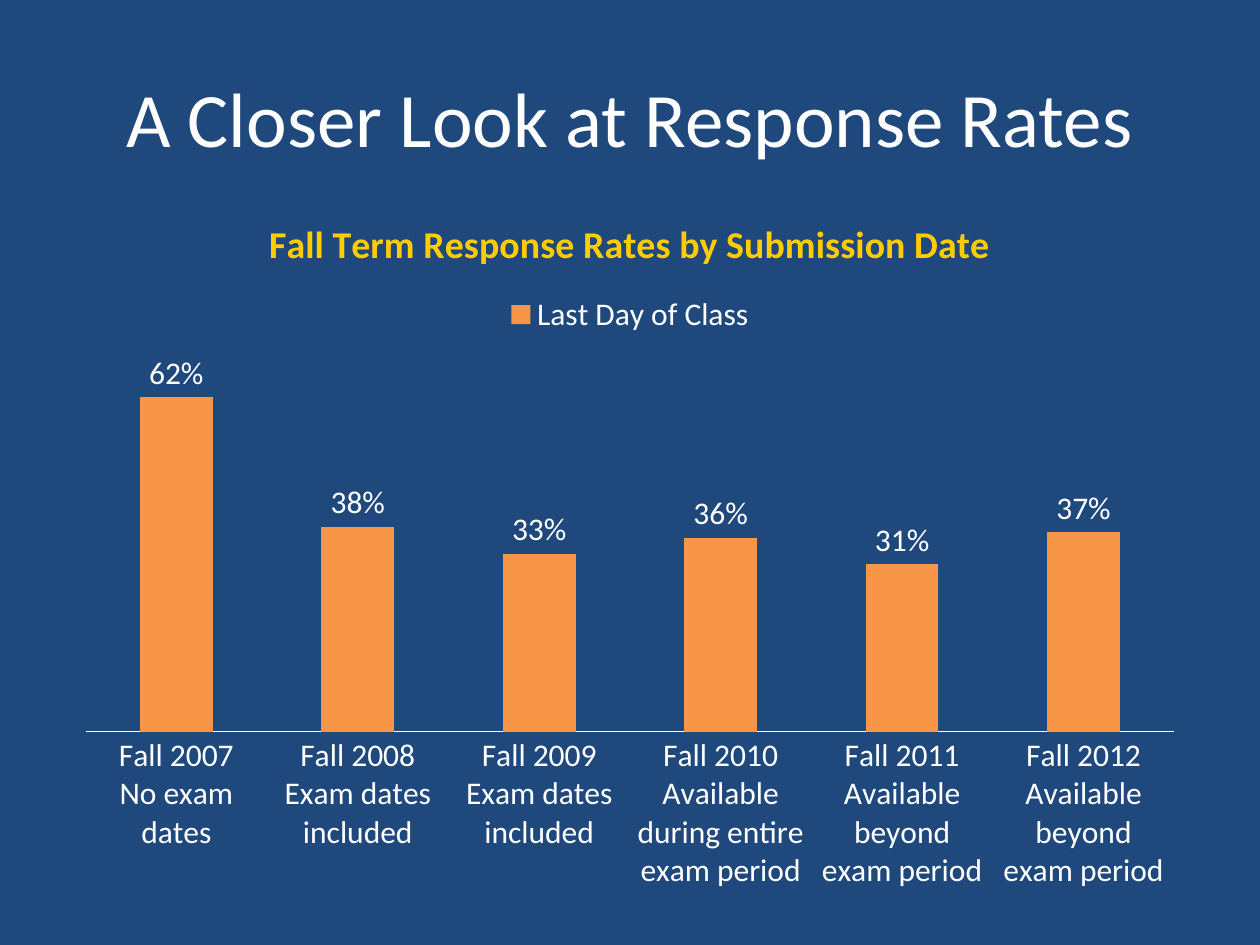
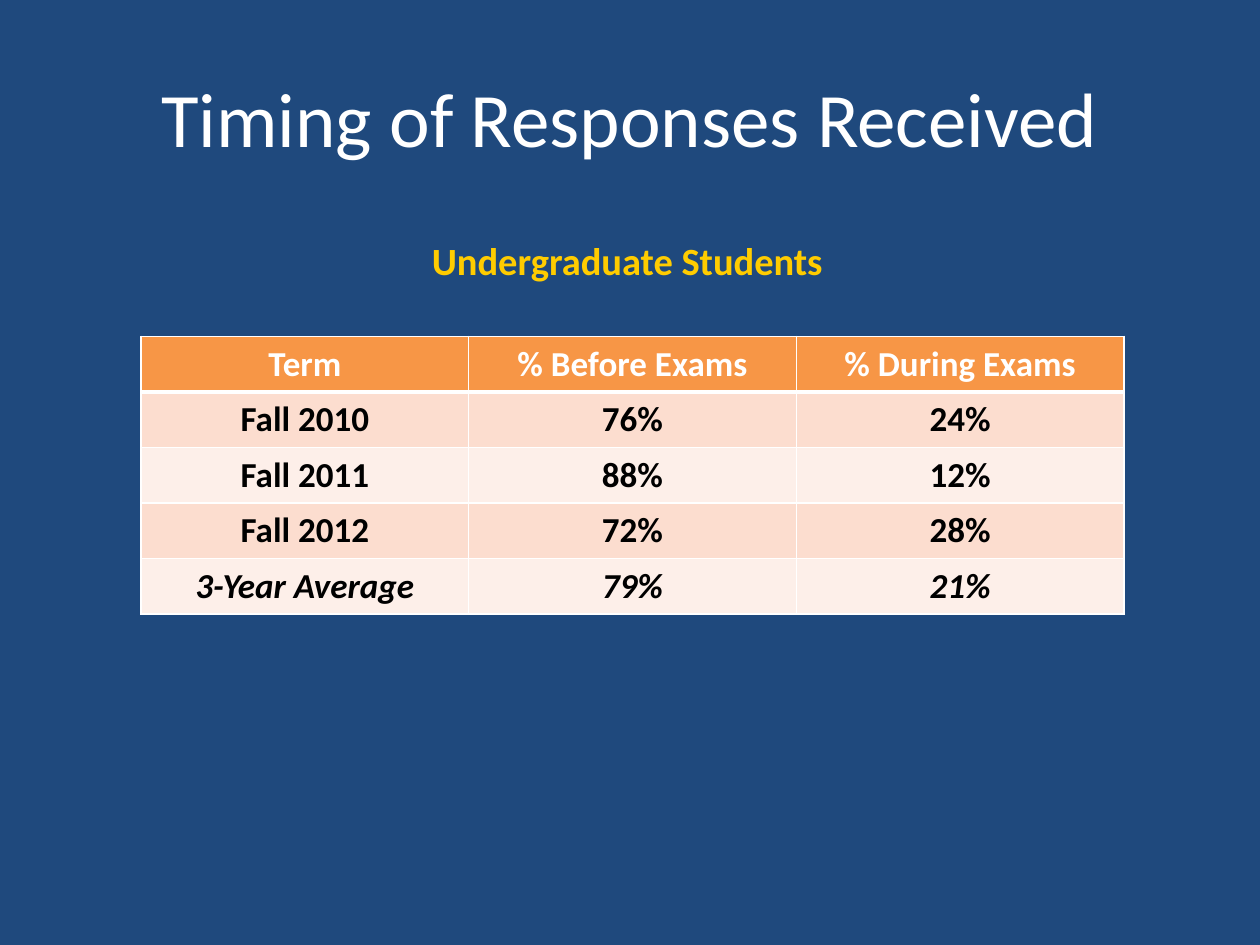
import pptx
import pptx.util
import pptx.chart.data
import pptx.dml.color
import pptx.enum.chart
import pptx.enum.text
import pptx.oxml
import pptx.oxml.ns

RGB = pptx.dml.color.RGBColor
NAVY = RGB(0x1F, 0x49, 0x7D)
WHITE = RGB(0xFF, 0xFF, 0xFF)
BLACK = RGB(0x00, 0x00, 0x00)
GOLD = RGB(0xFF, 0xCC, 0x00)
ORANGE = RGB(0xF7, 0x96, 0x46)
PEACH = RGB(0xFC, 0xDD, 0xCF)
CREAM = RGB(0xFD, 0xEF, 0xE9)
FONT = "Calibri"

# The slide is a grid of 20 columns by 15 rows
WIDE, HIGH = pptx.util.Inches(10), pptx.util.Inches(7.5)
COL, ROW = WIDE / 20, HIGH / 15
HEAD_BOX = (1, 0.6, 18, 2.5)
PLOT_BOX = (1, 3, 18, 11.34)
NOTE_BOX = (6.66, 3.66, 6.66, 0.94)
GRID_BOX = (2.24, 5.34, 15.6, 4.4)

RATES = {
    "Fall 2007\nNo exam dates": 0.62,
    "Fall 2008 Exam dates included": 0.38,
    "Fall 2009 Exam dates included": 0.33,
    "Fall 2010 Available during entire exam period": 0.36,
    "Fall 2011 Available beyond exam period": 0.31,
    "Fall 2012 Available beyond exam period": 0.37,
}
TIMES = [
    ("Term", "% Before Exams", "% During Exams"),
    ("Fall 2010", "76%", "24%"),
    ("Fall 2011", "88%", "12%"),
    ("Fall 2012", "72%", "28%"),
    ("3-Year Average", "79%", "21%"),
]


def place(box):
    """Turn columns and rows into slide lengths."""
    left, top, width, height = box
    return [round(n) for n in (left * COL, top * ROW, width * COL, height * ROW)]


def style(font, size, color, bold=False, slant=False):
    font.name, font.size = FONT, pptx.util.Pt(size)
    font.bold, font.italic = bold, slant
    font.color.rgb = color


def write(frame, text, *look, center=True):
    par = frame.paragraphs[0]
    align = pptx.enum.text.PP_ALIGN
    par.alignment = align.CENTER if center else align.LEFT
    run = par.add_run()
    run.text = text
    style(run.font, *look)


def start(deck, text):
    """Add a slide with the shared title."""
    slide = deck.slides.add_slide(deck.slide_layouts[5])
    head = slide.shapes.title
    head.left, head.top, head.width, head.height = place(HEAD_BOX)
    head.text_frame.vertical_anchor = pptx.enum.text.MSO_ANCHOR.MIDDLE
    write(head.text_frame, text, 44, WHITE)
    return slide


def plot(slide, box):
    kinds = pptx.enum.chart
    data = pptx.chart.data.CategoryChartData(number_format="0%")
    data.categories = list(RATES)
    data.add_series("Last Day of Class", list(RATES.values()))
    chart = slide.shapes.add_chart(
        kinds.XL_CHART_TYPE.COLUMN_CLUSTERED, *place(box), data).chart
    style(chart.font, 18, WHITE)

    # Title and legend
    chart.has_title = True
    write(chart.chart_title.text_frame,
          "Fall Term Response Rates by Submission Date", 21.6, GOLD, True)
    chart.chart_title.include_in_layout = False
    chart.has_legend = True
    chart.legend.position = kinds.XL_LEGEND_POSITION.TOP
    chart.legend.include_in_layout = False

    # Axes
    base, side = chart.category_axis, chart.value_axis
    base.major_tick_mark = kinds.XL_TICK_MARK.NONE
    base.format.line.color.rgb = WHITE
    side.minimum_scale, side.maximum_scale = 0, 0.7
    side.has_major_gridlines = False
    side.tick_labels.number_format = "0%"
    side.visible = False

    # Bars and their labels
    bars = chart.plots[0]
    bars.vary_by_categories = False
    bars.gap_width, bars.overlap = 150, -25
    fill = bars.series[0].format.fill
    fill.solid()
    fill.fore_color.rgb = ORANGE
    bars.has_data_labels = True
    tags = bars.data_labels
    tags.show_value = True
    tags.number_format, tags.number_format_is_linked = "0%", False
    tags.position = kinds.XL_LABEL_POSITION.OUTSIDE_END
    style(tags.font, 18, WHITE)


def edge(cell, top, low):
    """Draw white borders, with the given top and bottom points."""
    props = cell._tc.get_or_add_tcPr()
    for name, width in (("lnL", 1), ("lnR", 1), ("lnT", top), ("lnB", low)):
        props.append(pptx.oxml.parse_xml(
            f'<a:{name} {pptx.oxml.ns.nsdecls("a")} w="{pptx.util.Pt(width)}">'
            f'<a:solidFill><a:srgbClr val="{WHITE}"/></a:solidFill></a:{name}>'))


def table(slide, box):
    grid = slide.shapes.add_table(len(TIMES), len(TIMES[0]), *place(box)).table
    last = len(TIMES) - 1
    for r, line in enumerate(TIMES):
        shade = ORANGE if r == 0 else PEACH if r % 2 else CREAM
        ink = BLACK if r else WHITE
        for c, text in enumerate(line):
            cell = grid.cell(r, c)
            edge(cell, 3 if r == 1 else 1, 3 if r == 0 else 1)
            cell.fill.solid()
            cell.fill.fore_color.rgb = shade
            write(cell.text_frame, text, 20, ink, True, r == last)


def note(slide, box, text):
    frame = slide.shapes.add_textbox(*place(box)).text_frame
    frame.word_wrap = True
    write(frame, text, 22, GOLD, True, center=False)


def main():
    deck = pptx.Presentation()
    deck.slide_width, deck.slide_height = WIDE, HIGH
    back = deck.slide_master.background.fill
    back.solid()
    back.fore_color.rgb = NAVY

    # Response rates
    plot(start(deck, "A Closer Look at Response Rates"), PLOT_BOX)

    # Timing
    slide = start(deck, "Timing of Responses Received")
    table(slide, GRID_BOX)
    note(slide, NOTE_BOX, "Undergraduate Students")

    deck.save("out.pptx")


if __name__ == "__main__":
    main()
